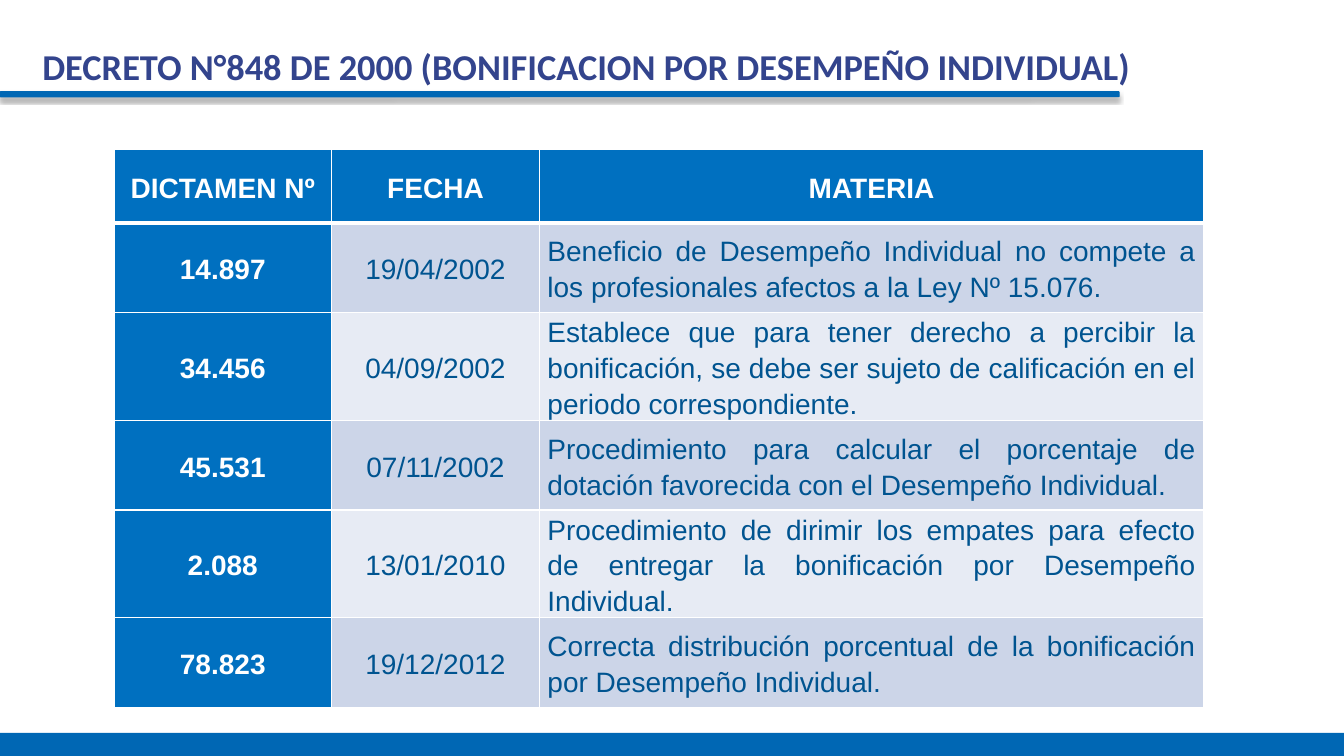
from lxml import etree
from pptx import Presentation
from pptx.dml.color import RGBColor
from pptx.enum.shapes import MSO_SHAPE
from pptx.enum.text import MSO_ANCHOR, PP_ALIGN
from pptx.oxml import parse_xml
from pptx.oxml.ns import nsdecls, qn
from pptx.util import Inches, Pt

CENTER, JUSTIFY = PP_ALIGN.CENTER, PP_ALIGN.JUSTIFY
MIDDLE = MSO_ANCHOR.MIDDLE
RECT, ROUNDED = MSO_SHAPE.RECTANGLE, MSO_SHAPE.ROUNDED_RECTANGLE

TITLE = "DECRETO N°848 DE 2000 (BONIFICACION POR DESEMPEÑO INDIVIDUAL)"
HEADINGS = ("DICTAMEN Nº", "FECHA", "MATERIA")
RULINGS = [
    ("14.897", "19/04/2002",
     "Beneficio de Desempeño Individual no compete a los profesionales afectos a la Ley Nº 15.076."),
    ("34.456", "04/09/2002",
     "Establece que para tener derecho a percibir la bonificación, se debe ser sujeto de "
     "calificación en el periodo correspondiente."),
    ("45.531", "07/11/2002",
     "Procedimiento para calcular el porcentaje de dotación favorecida con el Desempeño Individual."),
    ("2.088", "13/01/2010",
     "Procedimiento de dirimir los empates para efecto de entregar la bonificación por "
     "Desempeño Individual."),
    ("78.823", "19/12/2012",
     "Correcta distribución porcentual de la bonificación por Desempeño Individual."),
]
COLORS = {"bar": "0067B4", "header": "0070C0", "title": "33448D", "body": "005490",
          "odd": "CCD5E8", "even": "E7EBF4", "white": "FFFFFF"}

SLIDE_W, SLIDE_H = 13.33, 7.5
FOOTER_H = 0.23
TABLE_LEFT, TABLE_TOP = 1.13, 1.48
COLUMN_WIDTHS = (2.16, 2.06, 6.59)
HEADER_H, TWO_LINES_H, THREE_LINES_H = 0.73, 0.89, 1.07
THREE_LINE_ROW = 2
TITLE_FONT = {"name": "Calibri", "size": Pt(26), "bold": True}
TABLE_FONT = {"name": "Arial", "size": Pt(20)}
CELL_FORMAT = {"margin_left": Inches(0.08), "margin_right": Inches(0.08),
               "margin_top": 0, "margin_bottom": 0, "vertical_anchor": MIDDLE}
TITLE_FRAME = {"margin_left": 0, "margin_right": 0, "margin_top": 0, "margin_bottom": 0,
               "vertical_anchor": MIDDLE, "word_wrap": True}


def rgb(name):
    return RGBColor.from_string(COLORS[name])


def apply(target, values):
    for key, value in values.items():
        setattr(target, key, value)


def add_bar(slide, kind, left, top, width, height):
    bar = slide.shapes.add_shape(kind, *map(Inches, (left, top, width, height)))
    bar.shadow.inherit = False
    bar.fill.solid()
    bar.fill.fore_color.rgb = rgb("bar")
    bar.line.fill.background()
    return bar


def add_soft_shadow(bar):
    effects = bar._element.spPr.find(qn("a:effectLst"))
    effects.append(parse_xml(
        f'<a:outerShdw {nsdecls("a")} blurRad="{Pt(3.1)}" dist="{Pt(1.8)}" dir="5400000" '
        'rotWithShape="0"><a:srgbClr val="000000"><a:alpha val="35000"/></a:srgbClr></a:outerShdw>'))


def set_borders(cell, bottom, top):
    """Draw white cell borders; bottom and top are widths in points."""
    properties = cell._tc.get_or_add_tcPr()
    widths = {"lnL": 1, "lnR": 1, "lnT": top, "lnB": bottom}
    for index, (side, width) in enumerate(widths.items()):
        border = etree.Element(qn(f"a:{side}"), w=str(Pt(width)))
        fill = etree.SubElement(border, qn("a:solidFill"))
        etree.SubElement(fill, qn("a:srgbClr"), val=COLORS["white"])
        properties.insert(index, border)


def fill_cell(cell, words, row, column):
    emphasized = row == 0 or column == 0
    apply(cell, CELL_FORMAT)
    cell.fill.solid()
    cell.fill.fore_color.rgb = rgb("header" if emphasized else "odd" if row % 2 else "even")
    set_borders(cell, bottom=3 if row == 0 else 1, top=3 if row == 1 else 1)
    paragraph = cell.text_frame.paragraphs[0]
    paragraph.alignment = JUSTIFY if row and column == 2 else CENTER
    paragraph.line_spacing = 1.15
    run = paragraph.add_run()
    run.text = words
    apply(run.font, TABLE_FONT)
    run.font.bold = emphasized
    run.font.color.rgb = rgb("white" if emphasized else "body")


def add_rulings_table(slide):
    rows = [HEADINGS, *RULINGS]
    heights = [HEADER_H] + [TWO_LINES_H] * len(RULINGS)
    heights[THREE_LINE_ROW] = THREE_LINES_H
    table = slide.shapes.add_table(
        len(rows), len(HEADINGS), Inches(TABLE_LEFT), Inches(TABLE_TOP),
        Inches(sum(COLUMN_WIDTHS)), Inches(sum(heights))).table
    table.first_col = True
    for column, width in zip(table.columns, COLUMN_WIDTHS):
        column.width = Inches(width)
    for r, (values, height) in enumerate(zip(rows, heights)):
        table.rows[r].height = Inches(height)
        for c, words in enumerate(values):
            fill_cell(table.cell(r, c), words, r, c)


def add_title(slide):
    frame = slide.shapes.add_textbox(*map(Inches, (0.42, 0.43, 12.67, 0.44))).text_frame
    apply(frame, TITLE_FRAME)
    run = frame.paragraphs[0].add_run()
    run.text = TITLE
    apply(run.font, TITLE_FONT)
    run.font.color.rgb = rgb("title")


def main():
    deck = Presentation()
    deck.slide_width, deck.slide_height = Inches(SLIDE_W), Inches(SLIDE_H)
    slide = deck.slides.add_slide(deck.slide_layouts[6])
    underline = add_bar(slide, ROUNDED, 0, 0.91, 11.1, 0.05)
    underline.adjustments[0] = 0.12
    underline.line.color.rgb = rgb("bar")
    underline.line.width = Pt(0.75)
    add_soft_shadow(underline)
    add_bar(slide, RECT, 0, SLIDE_H - FOOTER_H, SLIDE_W, FOOTER_H)
    add_rulings_table(slide)
    add_title(slide)
    deck.save("out.pptx")


if __name__ == "__main__":
    main()
